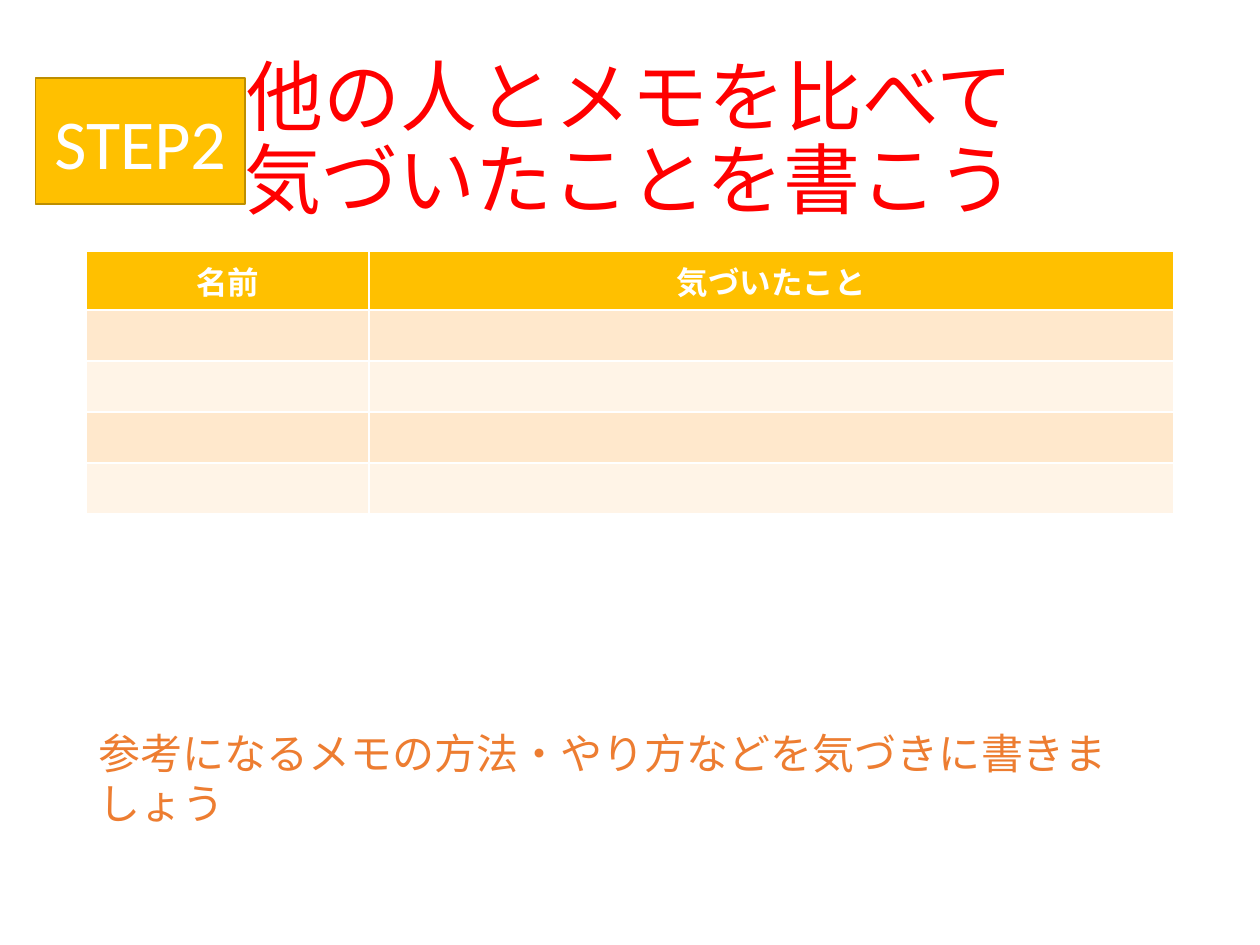
import dataclasses

import pptx
import pptx.dml.color
import pptx.enum.shapes
import pptx.enum.text
import pptx.util

Pt = pptx.util.Pt
ALIGN = pptx.enum.text.PP_ALIGN
MIDDLE = pptx.enum.text.MSO_ANCHOR.MIDDLE


@dataclasses.dataclass(frozen=True)
class Theme:
    """Colours, font and type sizes of the slide."""
    font: str = "Calibri"
    red: str = "FF0000"
    gold: str = "FFC000"
    edge: str = "BD8E00"
    orange: str = "ED7D31"
    white: str = "FFFFFF"
    bands: tuple = ("FFE8CC", "FFF4E7")
    title: int = 44
    step: int = 40
    note: int = 24
    cell: int = 18


THEME = Theme()
LEFT, WIDTH = 49.5, 621


def color(code):
    """Turn a hex code into a colour."""
    return pptx.dml.color.RGBColor.from_string(code)


def paint(fill, code):
    """Make a fill solid in one colour."""
    fill.solid()
    fill.fore_color.rgb = color(code)


def write(frame, lines, size, code, align=ALIGN.CENTER, bold=False):
    """Write lines as runs of one paragraph, with line breaks between."""
    para = frame.paragraphs[0]
    para.alignment = align
    for index, line in enumerate(lines):
        if index:
            para.add_line_break()
        run = para.add_run()
        run.text = line
        run.font.name = THEME.font
        run.font.size = Pt(size)
        run.font.bold = bold
        run.font.color.rgb = color(code)
    return para


def add_title(slide, lines):
    """Place and fill the title."""
    title = slide.shapes.title
    title.left, title.top = Pt(LEFT), Pt(28.75)
    title.width, title.height = Pt(WIDTH), Pt(104.38)
    frame = title.text_frame
    frame.vertical_anchor = MIDDLE
    para = write(frame, lines, THEME.title, THEME.red)
    para.line_spacing = 0.9


def add_grid(slide, heads, widths, count):
    """Add a table with a header and empty banded rows."""
    high = 29.2
    grid = slide.shapes.add_table(
        count + 1, len(heads), Pt(LEFT), Pt(143.75),
        Pt(WIDTH), Pt(high * (count + 1))).table
    for column, width in zip(grid.columns, widths):
        column.width = Pt(width)
    for index, row in enumerate(grid.rows):
        row.height = Pt(high)
        for cell in row.cells:
            paint(cell.fill, THEME.bands[(index - 1) % 2] if index else THEME.gold)
    for cell, head in zip(grid.rows[0].cells, heads):
        write(cell.text_frame, [head], THEME.cell, THEME.white, bold=True)


def add_step(slide, label):
    """Add the step badge beside the title."""
    badge = slide.shapes.add_shape(
        pptx.enum.shapes.MSO_SHAPE.RECTANGLE,
        Pt(20.3), Pt(44.8), Pt(119.6), Pt(72))
    badge.shadow.inherit = False
    paint(badge.fill, THEME.gold)
    badge.line.color.rgb = color(THEME.edge)
    badge.line.width = Pt(1)
    badge.text_frame.vertical_anchor = MIDDLE
    write(badge.text_frame, [label], THEME.step, THEME.white)


def add_note(slide, text):
    """Add the hint below the table."""
    box = slide.shapes.add_textbox(Pt(LEFT), Pt(412), Pt(WIDTH), Pt(36.35))
    frame = box.text_frame
    frame.word_wrap = True
    frame.auto_size = pptx.enum.text.MSO_AUTO_SIZE.SHAPE_TO_FIT_TEXT
    write(frame, [text], THEME.note, THEME.orange, ALIGN.LEFT)


def main():
    """Build and save the slide."""
    deck = pptx.Presentation()
    deck.slide_width, deck.slide_height = Pt(720), Pt(540)
    slide = deck.slides.add_slide(deck.slide_layouts[5])
    add_title(slide, ["他の人とメモを比べて", "気づいたことを書こう"])
    add_grid(slide, ["名前", "気づいたこと"], [161.5, 459.5], 4)
    add_step(slide, "STEP2")
    add_note(slide, "参考になるメモの方法・やり方などを気づきに書きましょう")
    deck.save("out.pptx")


if __name__ == "__main__":
    main()
